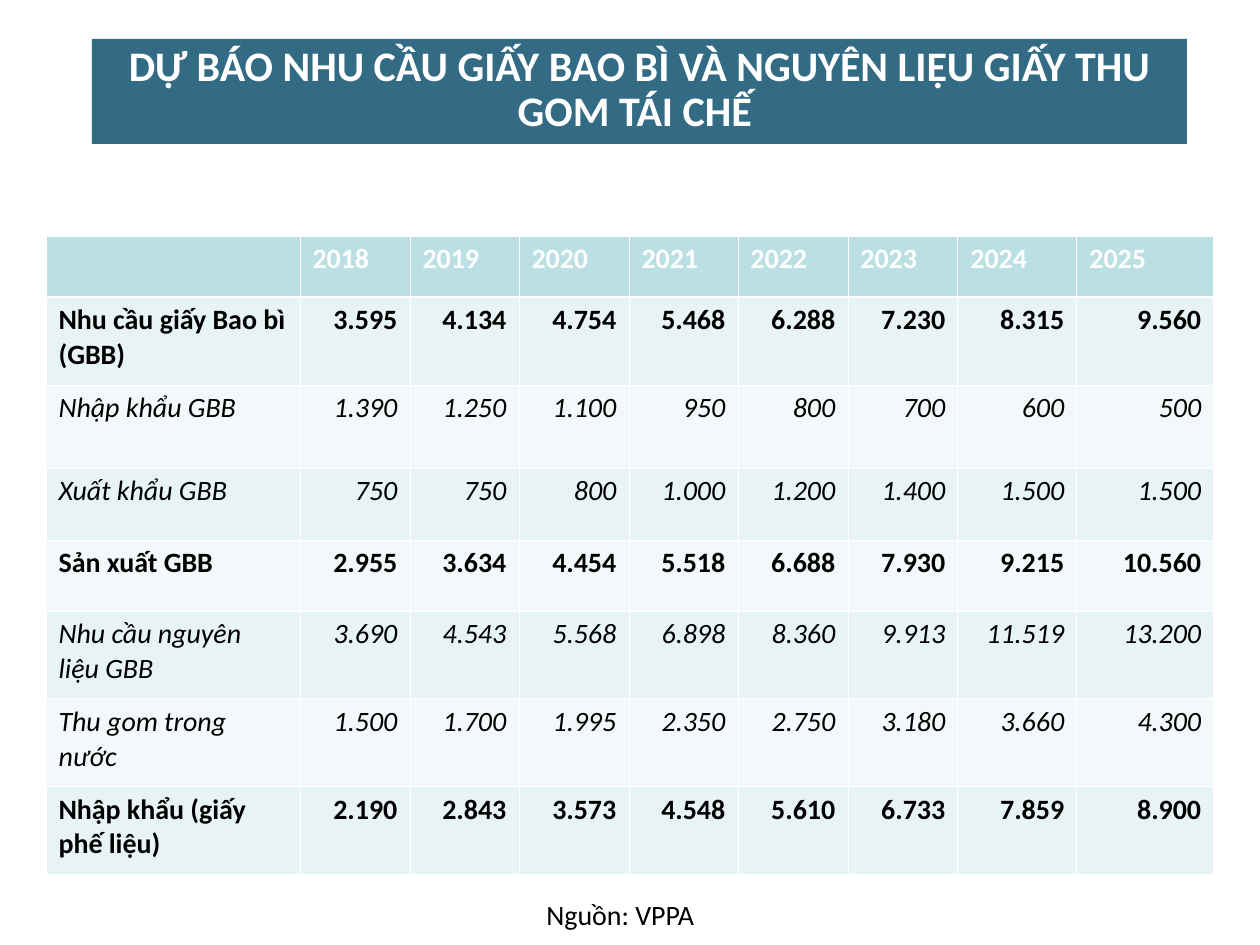
from itertools import pairwise

from lxml.etree import SubElement
from pptx import Presentation
from pptx.dml.color import RGBColor
from pptx.enum.shapes import MSO_SHAPE
from pptx.enum.text import MSO_ANCHOR, MSO_AUTO_SIZE, PP_ALIGN
from pptx.oxml.ns import qn
from pptx.util import Emu, Pt

THEME = {
    "font": "Calibri",
    "title_size": Pt(24),
    "body_size": Pt(16),
    "white": RGBColor(0xFF, 0xFF, 0xFF),
    "black": RGBColor(0, 0, 0),
    "banner": RGBColor(0x33, 0x6B, 0x84),
    "header": RGBColor(0xBB, 0xE0, 0xE3),
    "bands": (RGBColor(0xE7, 0xF3, 0xF4), RGBColor(0xF3, 0xF9, 0xFA)),
    "thin": Pt(0.45),
    "thick": Pt(1.47),
}

YEARS = range(2018, 2026)
FORECAST = [  # label, values by year, whether the row is a main total
    ("Nhu cầu giấy Bao bì (GBB)", "3.595 4.134 4.754 5.468 6.288 7.230 8.315 9.560", True),
    ("Nhập khẩu GBB", "1.390 1.250 1.100 950 800 700 600 500", False),
    ("Xuất khẩu GBB", "750 750 800 1.000 1.200 1.400 1.500 1.500", False),
    ("Sản xuất GBB", "2.955 3.634 4.454 5.518 6.688 7.930 9.215 10.560", True),
    ("Nhu cầu nguyên liệu GBB", "3.690 4.543 5.568 6.898 8.360 9.913 11.519 13.200", False),
    ("Thu gom trong nước", "1.500 1.700 1.995 2.350 2.750 3.180 3.660 4.300", False),
    ("Nhập khẩu (giấy phế liệu)", "2.190 2.843 3.573 4.548 5.610 6.733 7.859 8.900", True),
]
COLUMN_EDGES = [46, 300, 410, 519, 629, 738, 848, 958, 1077, 1214]
ROW_EDGES = [236, 297, 385, 468, 540, 611, 699, 787, 875]


def px(count):
    """Convert slide pixels (126 to the inch) to EMU."""
    return Emu(round(count * 914400 / 126))


def write(frame, text, align, **font_format):
    """Fill the first paragraph and format its run."""
    paragraph = frame.paragraphs[0]
    paragraph.alignment = align
    run = paragraph.add_run()
    run.text = text
    color = font_format.pop("color")
    for attribute, value in {"name": THEME["font"], **font_format}.items():
        setattr(run.font, attribute, value)
    run.font.color.rgb = color


deck = Presentation()
deck.slide_width, deck.slide_height = px(1260), px(945)
slide = deck.slides.add_slide(deck.slide_layouts[6])

# Forecast table
forecast = slide.shapes.add_table(
    len(ROW_EDGES) - 1, len(COLUMN_EDGES) - 1,
    px(COLUMN_EDGES[0]), px(ROW_EDGES[0]),
    px(COLUMN_EDGES[-1] - COLUMN_EDGES[0]), px(ROW_EDGES[-1] - ROW_EDGES[0]),
).table
forecast.horz_banding = False
for column, (left, right) in zip(forecast.columns, pairwise(COLUMN_EDGES)):
    column.width = px(right - left)
for row, (top, bottom) in zip(forecast.rows, pairwise(ROW_EDGES)):
    row.height = px(bottom - top)

lines = [("", *map(str, YEARS))] + [(label, *values.split()) for label, values, _ in FORECAST]
for r, line in enumerate(lines):
    is_header = r == 0
    is_bold = is_header or FORECAST[r - 1][2]
    for c, text in enumerate(line):
        cell = forecast.cell(r, c)
        properties = cell._tc.get_or_add_tcPr()
        for side in "LRTB":
            under_header = (r, side) in ((0, "B"), (1, "T"))
            width = THEME["thick" if under_header else "thin"]
            border = SubElement(properties, qn(f"a:ln{side}"), w=str(width))
            border_fill = SubElement(border, qn("a:solidFill"))
            SubElement(border_fill, qn("a:srgbClr"), val=str(THEME["white"]))
        cell.fill.solid()
        cell.fill.fore_color.rgb = THEME["header"] if is_header else THEME["bands"][(r - 1) % 2]
        if text:
            write(
                cell.text_frame, text,
                PP_ALIGN.LEFT if is_header or c == 0 else PP_ALIGN.RIGHT,
                size=THEME["body_size"], bold=is_bold, italic=not is_bold,
                color=THEME["white" if is_header else "black"],
            )

# Source note
source_note = slide.shapes.add_textbox(px(534), px(891), px(285), px(38)).text_frame
source_note.word_wrap = True
write(source_note, "Nguồn: VPPA", PP_ALIGN.LEFT, size=THEME["body_size"], color=THEME["black"])

# Title banner
banner = slide.shapes.add_shape(MSO_SHAPE.RECTANGLE, px(92), px(39), px(1095), px(105))
banner.shadow.inherit = False
banner.fill.solid()
banner.fill.fore_color.rgb = THEME["banner"]
banner.line.fill.background()
title = banner.text_frame
title.word_wrap = True
title.auto_size = MSO_AUTO_SIZE.SHAPE_TO_FIT_TEXT
title.vertical_anchor = MSO_ANCHOR.TOP
title.paragraphs[0].line_spacing = 0.9
write(
    title, "DỰ BÁO NHU CẦU GIẤY BAO BÌ VÀ NGUYÊN LIỆU GIẤY THU GOM TÁI CHẾ ",
    PP_ALIGN.CENTER, size=THEME["title_size"], bold=True, color=THEME["white"],
)

deck.save("out.pptx")
